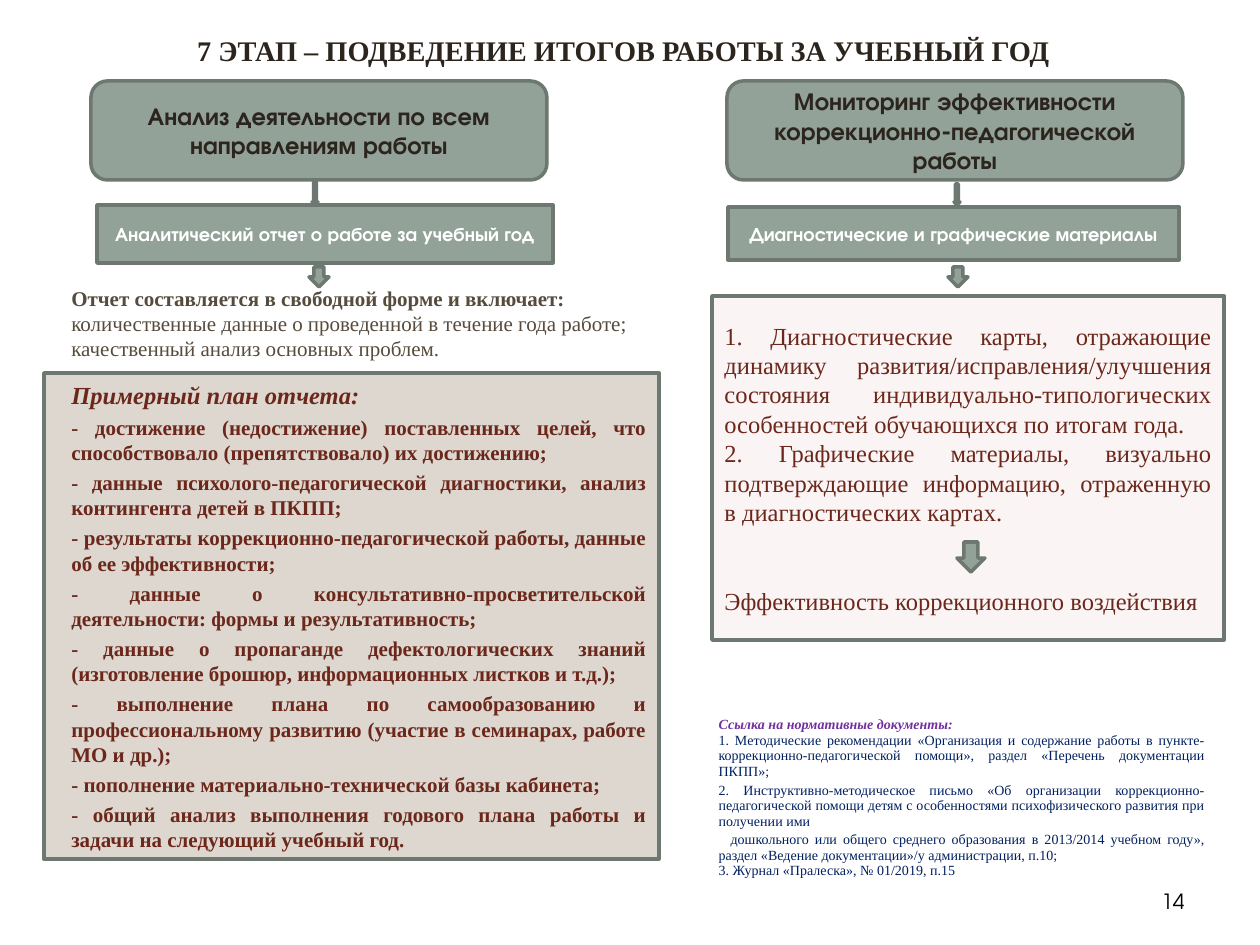
from lxml import etree
from pptx import Presentation
from pptx.dml.color import RGBColor
from pptx.enum import shapes, text
from pptx.oxml import ns
from pptx.util import Pt

SCALE = 914400 / 126
SERIF, SANS = "Times New Roman", "TeX Gyre Adventor"
SAGE, EDGE, DARK, RUST, NAVY = "93A299", "6D7871", "2B251E", "6C271B", "002060"
KIND = shapes.MSO_SHAPE
ALIGN = text.PP_ALIGN
MIDDLE = text.MSO_ANCHOR.MIDDLE

REPORT = [
    "количественные данные о проведенной в течение года работе;",
    "качественный анализ основных проблем.",
]
PLAN = [
    "- достижение (недостижение) поставленных целей, что способствовало (препятствовало) их достижению;",
    "- данные психолого-педагогической диагностики, анализ контингента детей в ПКПП;",
    "- результаты коррекционно-педагогической работы, данные об ее эффективности;",
    "- данные о консультативно-просветительской деятельности: формы и результативность;",
    "- данные о пропаганде дефектологических знаний (изготовление брошюр, информационных листков и т.д.);",
    "- выполнение плана по самообразованию и профессиональному развитию (участие в семинарах, работе МО и др.);",
    "- пополнение материально-технической базы кабинета;",
    "- общий анализ выполнения годового плана работы и задачи на следующий учебный год.",
]
# Text, space before in points, first-line indent in px
RESULTS = [
    ("1. Диагностические карты, отражающие динамику развития/исправления/улучшения состояния "
     "индивидуально-типологических особенностей обучающихся по итогам года.", 0, 0),
    ("2. Графические материалы, визуально подтверждающие информацию, отраженную в "
     "диагностических картах.", 0, 0),
    ("Эффективность коррекционного воздействия", 34, 0),
]
SOURCES = [
    ("1. Методические рекомендации «Организация и содержание работы в "
     "пункте-коррекционно-педагогической помощи», раздел «Перечень документации ПКПП»;", 0, 0),
    ("2. Инструктивно-методическое письмо «Об организации коррекционно-педагогической помощи "
     "детям с особенностями психофизического развития при получении ими", 1.8, 0),
    ("дошкольного или общего среднего образования в 2013/2014 учебном году», "
     "раздел «Ведение документации»/у администрации, п.10;", 1.8, 12),
    ("3. Журнал «Пралеска», № 01/2019, п.15", 0, 0),
]


def px(n):
    return round(n * SCALE)


def box(*nums):
    return [px(n) for n in nums]


def color(code):
    return RGBColor.from_string(code)


def write(frame, words, size, code, font=SERIF, bold=False, italic=False,
          align=ALIGN.LEFT, before=0, left=0, first=0, line=None):
    """Add one paragraph, using the empty first one if it is free."""
    para = frame.paragraphs[0]
    if para.runs:
        para = frame.add_paragraph()
    para.alignment = align
    para.space_before = Pt(before)
    if line:
        para.line_spacing = Pt(line)
    if left or first:
        props = para._p.get_or_add_pPr()
        props.set("marL", str(px(left)))
        props.set("indent", str(px(first)))
    run = para.add_run()
    run.text = words
    face = run.font
    face.name, face.size, face.bold, face.italic = font, Pt(size), bold, italic
    face.color.rgb = color(code)


def shape(slide, kind, place, fill=SAGE, alpha=100):
    item = slide.shapes.add_shape(kind, *box(*place))
    item.shadow.inherit = False
    item.fill.solid()
    item.fill.fore_color.rgb = color(fill)
    if alpha < 100:
        tint = item.fill._xPr.find(ns.qn("a:solidFill"))[0]
        etree.SubElement(tint, ns.qn("a:alpha")).set("val", str(alpha * 1000))
    item.line.color.rgb = color(EDGE)
    item.line.width = Pt(2)
    frame = item.text_frame
    frame.word_wrap = True
    frame.vertical_anchor = MIDDLE
    return frame


def label(slide, kind, place, words, size, code):
    frame = shape(slide, kind, place)
    write(frame, words, size, code, SANS, bold=True, align=ALIGN.CENTER)


def note(slide, place):
    frame = slide.shapes.add_textbox(*box(*place)).text_frame
    frame.word_wrap = True
    return frame


def heading(slide):
    title = slide.shapes.title
    title.left, title.top, title.width, title.height = box(54, 26, 1138, 49)
    frame = title.text_frame
    frame.word_wrap = True
    frame.vertical_anchor = MIDDLE
    write(frame, "7 ЭТАП – ПОДВЕДЕНИЕ ИТОГОВ РАБОТЫ ЗА УЧЕБНЫЙ ГОД",
          16.2, DARK, bold=True, align=ALIGN.CENTER)


def report(slide):
    frame = note(slide, (44, 279, 615, 90))
    write(frame, "Отчет составляется в свободной форме и включает:",
          12, "564B3C", bold=True, left=15)
    for words in REPORT:
        write(frame, words, 12, "564B3C", left=15, line=14.4)


def plan(slide):
    frame = shape(slide, KIND.RECTANGLE, (44, 373, 615, 486), "A5957E", 37)
    write(frame, "Примерный план отчета:", 14, RUST, bold=True, italic=True, left=15)
    for words in PLAN:
        write(frame, words, 12, RUST, bold=True, align=ALIGN.JUSTIFY, before=2.8, left=15)


def rows(frame, items, size, code):
    for words, before, first in items:
        write(frame, words, size, code, align=ALIGN.JUSTIFY, before=before, first=first)


def sources(slide):
    table = slide.shapes.add_table(1, 1, *box(706, 711, 512, 208)).table
    cell = table.cell(0, 0)
    cell.fill.background()
    write(cell.text_frame, "Ссылка на нормативные документы:", 8, "7030A0",
          bold=True, italic=True)
    rows(cell.text_frame, SOURCES, 8, NAVY)


def main():
    deck = Presentation()
    deck.slide_width, deck.slide_height = box(1260, 945)
    slide = deck.slides.add_slide(deck.slide_layouts[5])
    heading(slide)
    report(slide)

    number = note(slide, (903, 876, 294, 50))
    number.vertical_anchor = MIDDLE
    write(number, "14", 12, "000000", SANS, align=ALIGN.RIGHT)

    for left, words in (
        (91, "Анализ деятельности по всем направлениям работы"),
        (727, "Мониторинг эффективности коррекционно-педагогической работы"),
    ):
        label(slide, KIND.ROUNDED_RECTANGLE, (left, 81, 456, 99), words, 14, DARK)
    for place in ((312, 180, 6, 25), (954, 184, 6, 21),
                  (309, 267, 20, 20), (948, 267, 20, 20)):
        shape(slide, KIND.DOWN_ARROW, place)
    for place, words in (
        ((97, 205, 456, 58), "Аналитический отчет о работе за учебный год"),
        ((728, 207, 451, 53), "Диагностические и графические материалы"),
    ):
        label(slide, KIND.RECTANGLE, place, words, 11, "FFFFFF")

    plan(slide)
    results = shape(slide, KIND.RECTANGLE, (712, 296, 512, 344), "A23A28", 5)
    rows(results, RESULTS, 14, RUST)
    shape(slide, KIND.DOWN_ARROW, (957, 542, 28, 30))
    sources(slide)
    deck.save("out.pptx")


if __name__ == "__main__":
    main()
